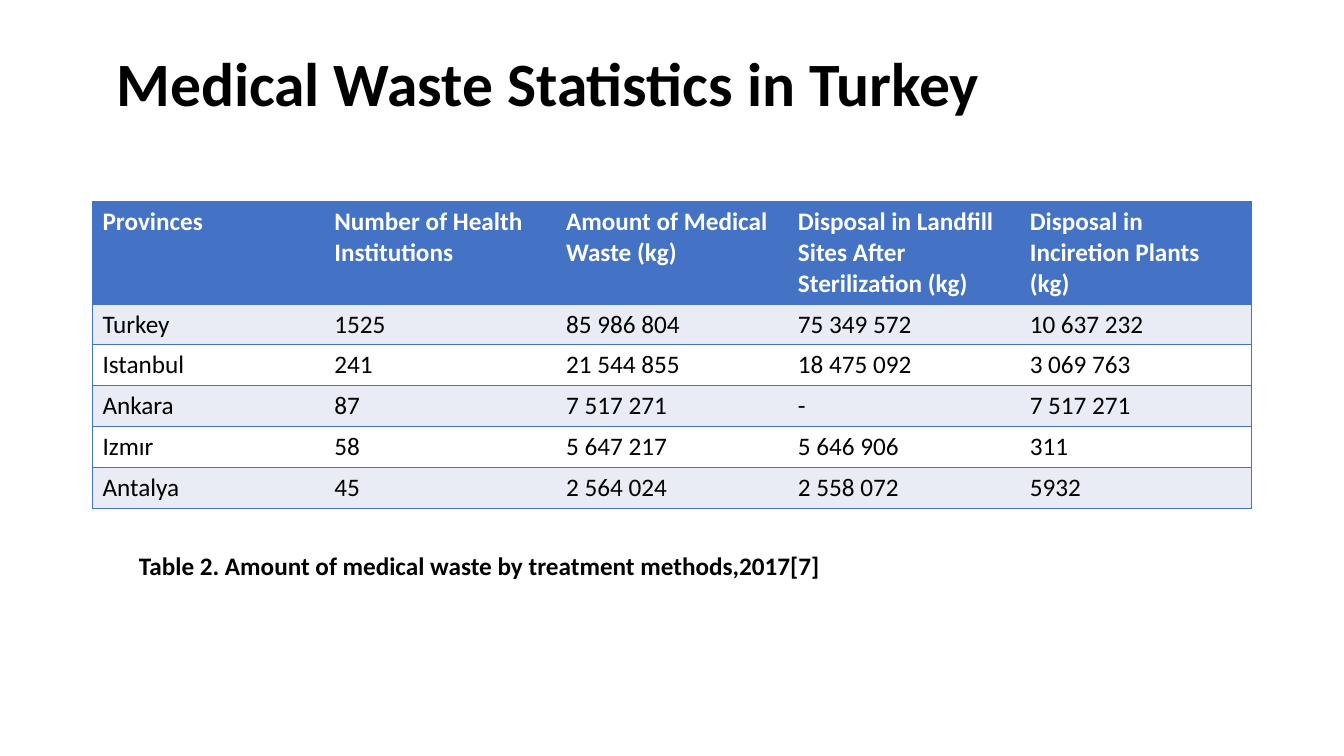
import dataclasses

import lxml.etree
import pptx
import pptx.dml.color
import pptx.enum.text
import pptx.oxml.ns
import pptx.util

Cm = pptx.util.Cm


@dataclasses.dataclass(frozen=True)
class Theme:
    font: str = "Calibri"
    title_size: int = 44
    text_size: int = 18
    ink: str = "000000"
    paper: str = "FFFFFF"
    accent: str = "4472C4"
    band: str = "E9EBF5"


THEME = Theme()

HEADINGS = (
    "Provinces",
    "Number of Health Institutions",
    "Amount of Medical Waste (kg)",
    "Disposal in Landfill Sites After Sterilization (kg)",
    "Disposal in Inciretion Plants (kg)",
)
PROVINCES = (
    ("Turkey", "1525", "85 986 804", "75 349 572", "10 637 232"),
    ("Istanbul", "241", "21 544 855", "18 475 092", "3 069 763"),
    ("Ankara", "87", "7 517 271", "-", "7 517 271"),
    ("Izmır", "58", "5 647 217", "5 646 906", "311"),
    ("Antalya", "45", "2 564 024", "2 558 072", "5932"),
)


def rgb(value):
    return pptx.dml.color.RGBColor.from_string(value)


def write(frame, text, size, color, bold=False):
    frame.text = text
    for para in frame.paragraphs:
        for span in para.runs:
            span.font.name = THEME.font
            span.font.size = pptx.util.Pt(size)
            span.font.bold = bold
            span.font.color.rgb = rgb(color)


def add_title(page, text):
    title = page.shapes.title
    title.left, title.top, title.width, title.height = Cm(2.33), Cm(1.01), Cm(29.21), Cm(2.34)
    frame = title.text_frame
    write(frame, text, THEME.title_size, THEME.ink, bold=True)
    frame.margin_left = Cm(0.6)
    frame.vertical_anchor = pptx.enum.text.MSO_ANCHOR.MIDDLE
    para = frame.paragraphs[0]
    para.alignment = pptx.enum.text.PP_ALIGN.LEFT
    para.line_spacing = 0.9


def set_borders(cell, ruled_sides):
    """Rule the given sides of a cell and leave the others open."""
    qn = pptx.oxml.ns.qn
    properties = cell._tc.get_or_add_tcPr()
    for position, side in enumerate("LRTB"):
        line = lxml.etree.Element(qn("a:ln" + side), w=str(pptx.util.Pt(1)))
        if side in ruled_sides:
            fill = lxml.etree.SubElement(line, qn("a:solidFill"))
            lxml.etree.SubElement(fill, qn("a:srgbClr"), val=THEME.accent)
        else:
            lxml.etree.SubElement(line, qn("a:noFill"))
        properties.insert(position, line)


def add_statistics_table(page, headings, records):
    rows = (headings, *records)
    table = page.shapes.add_table(
        len(rows), len(headings), Cm(2.33), Cm(5.08), Cm(29.21), Cm(7.7)
    ).table
    for row_index, values in enumerate(rows):
        header = row_index == 0
        table.rows[row_index].height = Cm(2.55 if header else 1.03)
        if header:
            fill, ink = THEME.accent, THEME.paper
        else:
            fill, ink = (THEME.band if row_index % 2 else THEME.paper), THEME.ink
        for column_index, value in enumerate(values):
            cell = table.cell(row_index, column_index)
            write(cell.text_frame, value, THEME.text_size, ink, bold=header)
            cell.fill.solid()
            cell.fill.fore_color.rgb = rgb(fill)
            # Horizontal rules everywhere, vertical ones on the outside only
            sides = "TB"
            if column_index == 0:
                sides += "L"
            if column_index == len(headings) - 1:
                sides += "R"
            set_borders(cell, sides)


def add_caption(page, text):
    box = page.shapes.add_textbox(Cm(3.25), Cm(13.74), Cm(24.1), Cm(1.03))
    box.text_frame.word_wrap = True
    box.text_frame.auto_size = pptx.enum.text.MSO_AUTO_SIZE.SHAPE_TO_FIT_TEXT
    write(box.text_frame, text, THEME.text_size, THEME.ink, bold=True)


def main():
    # Widescreen deck with a title-only page
    deck = pptx.Presentation()
    deck.slide_width, deck.slide_height = Cm(33.87), Cm(19.05)
    page = deck.slides.add_slide(deck.slide_layouts.get_by_name("Title Only"))

    # Title, table and caption
    add_title(page, "Medical Waste Statistics in Turkey")
    add_statistics_table(page, HEADINGS, PROVINCES)
    add_caption(page, "Table 2. Amount of medical waste by treatment methods,2017[7]")

    deck.save("out.pptx")


if __name__ == "__main__":
    main()
